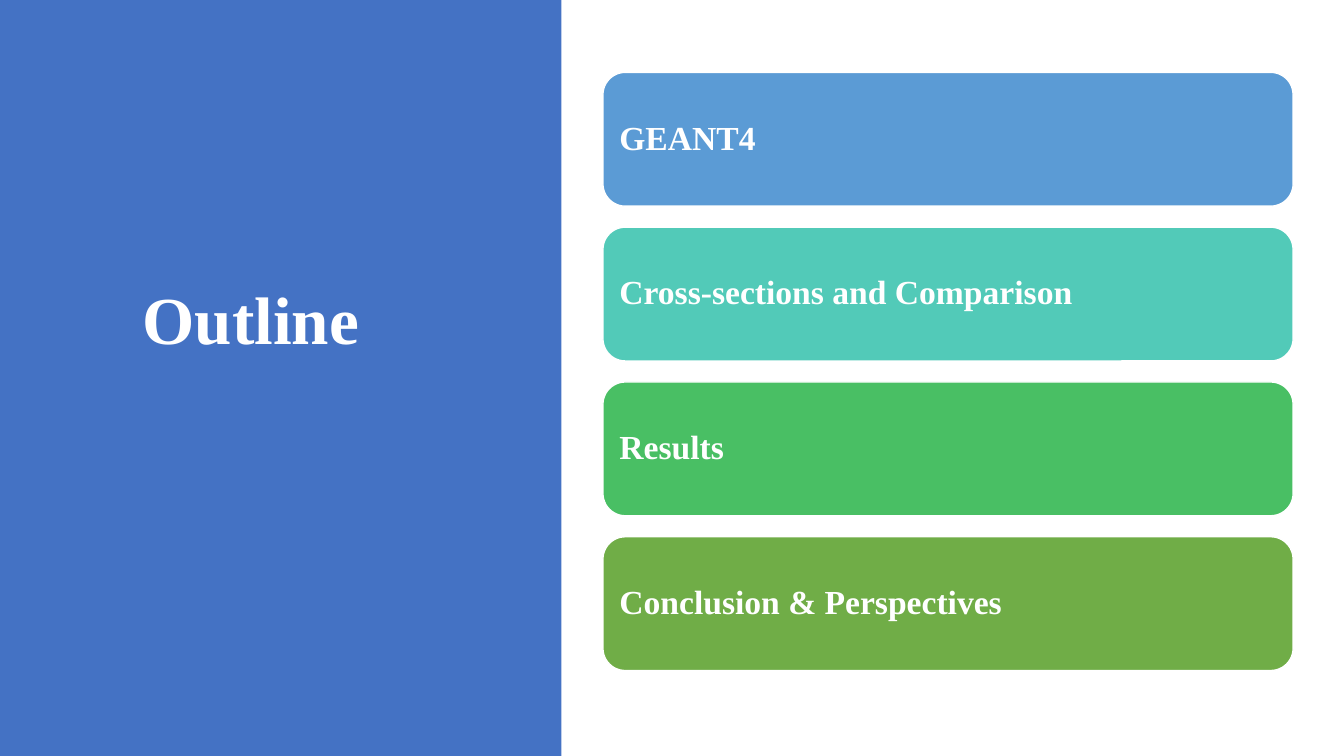
from dataclasses import dataclass

from pptx import Presentation
from pptx.dml.color import RGBColor
from pptx.enum.shapes import MSO_SHAPE
from pptx.enum.text import MSO_ANCHOR, PP_ALIGN
from pptx.util import Pt


@dataclass(frozen=True)
class Theme:
    font: str = "Times New Roman"
    white: str = "FFFFFF"
    panel: str = "4472C4"
    title: int = 48
    body: int = 24


THEME = Theme()
WIDTH, HEIGHT = 960, 540
TOPICS = [
    ("GEANT4", "5B9BD5"),
    ("Cross-sections and Comparison", "52CAB8"),
    ("Results", "49BF64"),
    ("Conclusion & Perspectives", "70AD47"),
]


def color(code):
    return RGBColor.from_string(code)


def write(frame, text, size, align):
    """Fill a frame with one bold white line, centred in height."""
    frame.word_wrap = True
    frame.vertical_anchor = MSO_ANCHOR.MIDDLE
    line = frame.paragraphs[0]
    line.alignment = align
    line.line_spacing = 0.9
    run = line.add_run()
    run.text = text
    run.font.name = THEME.font
    run.font.size = Pt(size)
    run.font.bold = True
    run.font.color.rgb = color(THEME.white)


def add_block(slide, kind, box, fill):
    block = slide.shapes.add_shape(kind, *map(Pt, box))
    block.shadow.inherit = False
    block.fill.solid()
    block.fill.fore_color.rgb = color(fill)
    block.line.fill.background()
    return block


def add_panel(slide, box, text):
    """Draw the colour panel and set the slide title on it."""
    left, top, width, height = box
    panel = add_block(slide, MSO_SHAPE.RECTANGLE, box, THEME.panel)
    title = slide.shapes.title
    panel.element.addnext(title.element)
    title.left, title.top = Pt(left + 41), Pt(top + 49)
    title.width, title.height = Pt(width - 124.5), Pt(height - 177)
    write(title.text_frame, text, THEME.title, PP_ALIGN.CENTER)


def add_cards(slide, box, topics, gap):
    """Stack one equal card per topic in the box."""
    left, top, width, height = box
    tall = (height - gap * (len(topics) - 1)) / len(topics)
    for row, (text, fill) in enumerate(topics):
        place = (left, top + row * (tall + gap), width, tall)
        card = add_block(slide, MSO_SHAPE.ROUNDED_RECTANGLE, place, fill)
        card.line.color.rgb = color(THEME.white)
        card.line.width = Pt(1)
        frame = card.text_frame
        frame.margin_left = frame.margin_right = Pt(7.2)
        frame.margin_top = frame.margin_bottom = Pt(7.2)
        write(frame, text, THEME.body, PP_ALIGN.LEFT)


def main():
    deck = Presentation()
    deck.slide_width, deck.slide_height = Pt(WIDTH), Pt(HEIGHT)
    slide = deck.slides.add_slide(deck.slide_layouts.get_by_name("Title Only"))
    add_panel(slide, (0, 0, 401, HEIGHT), "Outline")
    add_cards(slide, (430.7, 51.7, 493, 427.3), TOPICS, 15)
    deck.save("out.pptx")


if __name__ == "__main__":
    main()
